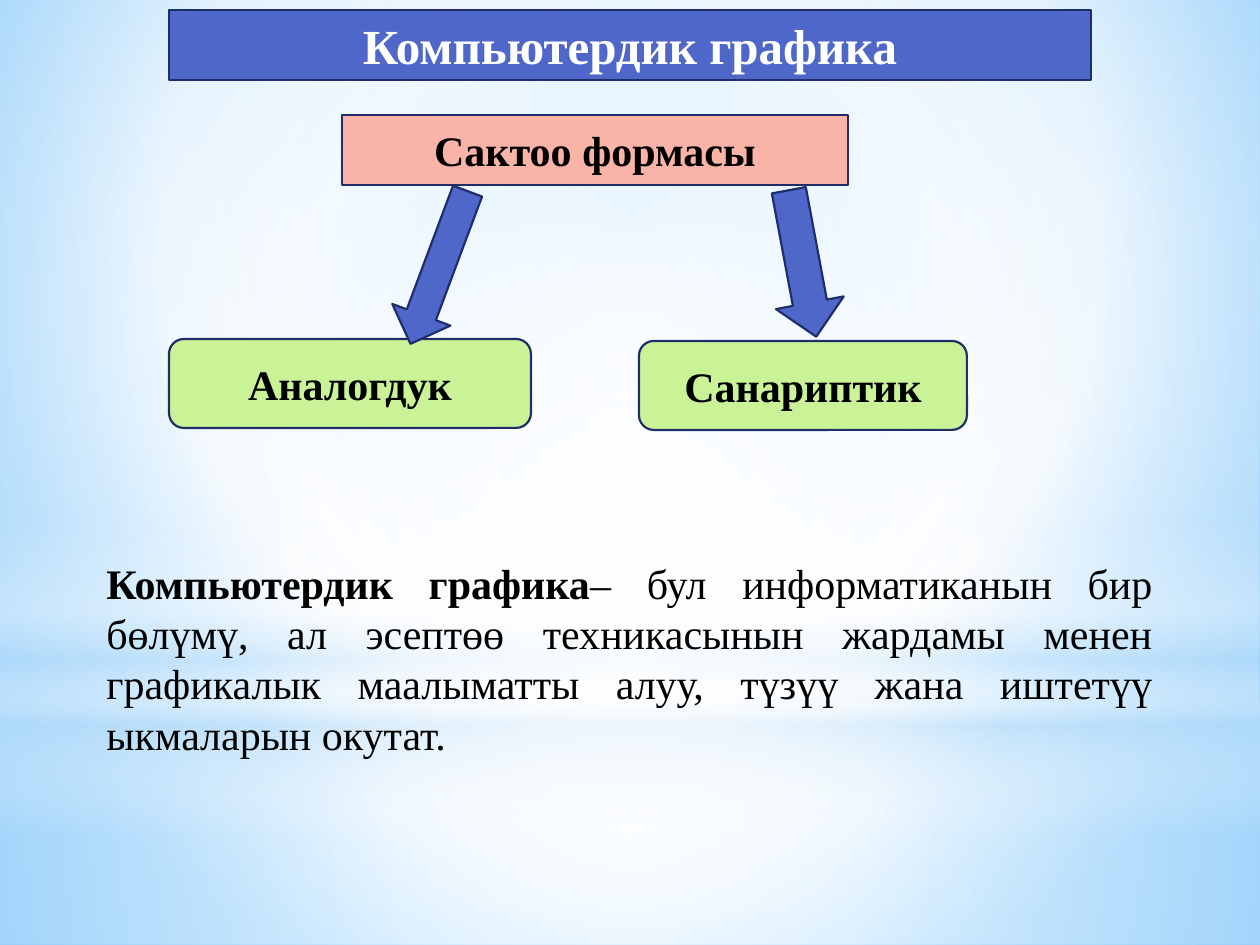
from lxml import etree
from pptx import Presentation
from pptx import util as u
from pptx.dml.color import RGBColor
from pptx.enum import shapes, text
from pptx.oxml.ns import qn

PX = 914400 / 126
WIDTH, HEIGHT = 1260, 945
FONT = "Times New Roman"

WHITE = RGBColor(0xFF, 0xFF, 0xFF)
BLACK = RGBColor(0x00, 0x00, 0x00)
SKY = RGBColor(0x9E, 0xD5, 0xFF)
DEEP_SKY = RGBColor(0x5B, 0xB9, 0xFF)
PALE_BLUE = RGBColor(0xB4, 0xDC, 0xFA)
BLUE = RGBColor(0x4E, 0x67, 0xC8)
NAVY = RGBColor(0x1F, 0x2E, 0x69)
PINK = RGBColor(0xF9, 0xB3, 0xA7)
LIME = RGBColor(0xCA, 0xF2, 0x97)

KIND = shapes.MSO_SHAPE


def px(length):
    return u.Emu(round(length * PX))


def place(item, box):
    item.left, item.top, item.width, item.height = map(px, box)


def apply_gradient(fill, holder, stops, focus=None):
    fill.solid()
    solid = holder.find(qn("a:solidFill"))
    gradient = etree.Element(qn("a:gradFill"), rotWithShape="1")
    stop_list = etree.SubElement(gradient, qn("a:gsLst"))
    for position, color, opacity in stops:
        stop = etree.SubElement(stop_list, qn("a:gs"), pos=str(position * 1000))
        tint = etree.SubElement(stop, qn("a:srgbClr"), val=str(color))
        if opacity < 100:
            etree.SubElement(tint, qn("a:alpha"), val=str(opacity * 1000))
    if focus:
        circle = etree.SubElement(gradient, qn("a:path"), path="circle")
        edges = {side: str(share * 1000) for side, share in zip("ltrb", focus)}
        etree.SubElement(circle, qn("a:fillToRect"), **edges)
    else:
        etree.SubElement(gradient, qn("a:lin"), ang="5400000", scaled="0")
    holder.replace(solid, gradient)


def add_glow(slide, kind, box, stops, focus=None):
    glow = slide.shapes.add_shape(kind, *map(px, box))
    glow.shadow.inherit = False
    glow.line.fill.background()
    apply_gradient(glow.fill, glow._element.spPr, stops, focus)


def paint(item, color):
    item.fill.solid()
    item.fill.fore_color.rgb = color
    item.line.color.rgb = NAVY
    item.line.width = u.Pt(1.25)


def write(frame, *pieces, size=24, color=BLACK, align=text.PP_ALIGN.CENTER,
          anchor=text.MSO_ANCHOR.MIDDLE):
    frame.word_wrap = True
    frame.auto_size = text.MSO_AUTO_SIZE.NONE
    frame.vertical_anchor = anchor
    paragraph = frame.paragraphs[0]
    paragraph.alignment = align
    for words, bold in pieces:
        run = paragraph.add_run()
        run.text = words
        run.font.name = FONT
        run.font.size = u.Pt(size)
        run.font.bold = bold
        run.font.color.rgb = color


def add_block(slide, kind, box, color, label=None, rotation=0):
    block = slide.shapes.add_shape(kind, *map(px, box))
    block.shadow.inherit = False
    block.rotation = rotation
    paint(block, color)
    if label:
        write(block.text_frame, (label, True))


def add_title(slide, box, words):
    title = slide.shapes.title
    place(title, box)
    outline = etree.Element(qn("a:prstGeom"), prst="roundRect")
    etree.SubElement(outline, qn("a:avLst"))
    title._element.spPr.find(qn("a:xfrm")).addnext(outline)
    paint(title, BLUE)
    write(title.text_frame, (words, True), size=28, color=WHITE)
    slide.shapes._spTree.append(title._element)


def add_backdrop(slide):
    fill = slide.background.fill
    fill.solid()
    holder = slide._element.find(".//" + qn("p:bgPr"))
    apply_gradient(fill, holder,
                   [(0, SKY, 100), (60, WHITE, 100), (100, DEEP_SKY, 100)],
                   (20, 10, 20, 60))
    horizon = 703
    center = (50, 50, 50, 50)
    add_glow(slide, KIND.RECTANGLE, (0, horizon, WIDTH, HEIGHT - horizon),
             [(0, WHITE, 91), (37, WHITE, 76), (100, PALE_BLUE, 79)], center)
    add_glow(slide, KIND.RECTANGLE, (0, 0, WIDTH, horizon),
             [(0, WHITE, 89), (48, WHITE, 62), (100, PALE_BLUE, 79)], center)
    add_glow(slide, KIND.RECTANGLE, (0, 519, WIDTH, 315),
             [(0, WHITE, 0), (29, WHITE, 30), (45, PALE_BLUE, 40),
              (55, WHITE, 26), (65, PALE_BLUE, 60), (100, WHITE, 0)])
    add_glow(slide, KIND.OVAL, (0, 220, WIDTH, horizon),
             [(0, WHITE, 100), (56, WHITE, 0)], center)


def add_definition(slide, box, term, meaning):
    definition = slide.shapes.add_textbox(*map(px, box))
    write(definition.text_frame, (term, True), (meaning, False),
          align=text.PP_ALIGN.JUSTIFY, anchor=text.MSO_ANCHOR.TOP)


def main():
    deck = Presentation()
    deck.slide_width, deck.slide_height = px(WIDTH), px(HEIGHT)
    slide = deck.slides.add_slide(deck.slide_layouts[5])
    topic = "Компьютердик графика"

    add_backdrop(slide)
    add_title(slide, (169, 10, 922, 70), topic)
    add_block(slide, KIND.RECTANGLE, (342, 115, 506, 70), PINK, "Сактоо формасы")
    add_block(slide, KIND.ROUNDED_RECTANGLE, (169, 339, 362, 89), LIME, "Аналогдук")
    add_block(slide, KIND.ROUNDED_RECTANGLE, (639, 341, 328, 89), LIME, "Санариптик")
    add_block(slide, KIND.RIGHT_ARROW, (728, 229, 149, 69), BLUE, rotation=79.4)
    add_block(slide, KIND.DOWN_ARROW, (408, 186, 62, 163), BLUE, rotation=20.5)
    add_definition(slide, (94, 551, 1071, 217), topic,
                   "– бул информатиканын бир бөлүмү, ал эсептөө техникасынын "
                   "жардамы менен графикалык маалыматты алуу, түзүү жана "
                   "иштетүү ыкмаларын окутат.")
    deck.save("out.pptx")


if __name__ == "__main__":
    main()
